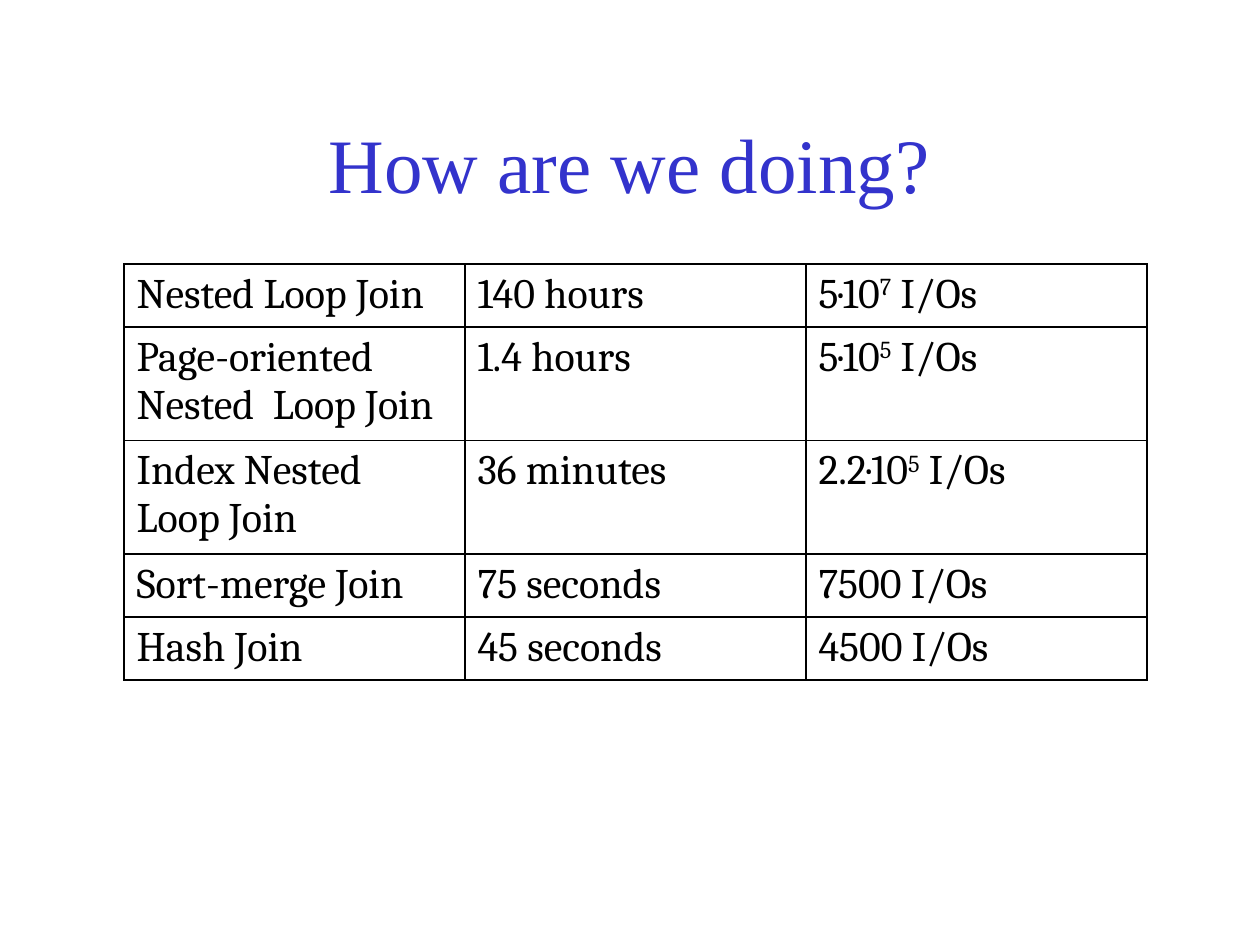
from typing import NamedTuple

from lxml.etree import SubElement
from pptx import Presentation
from pptx.dml.color import RGBColor
from pptx.enum.text import MSO_ANCHOR as Anchor, PP_ALIGN as Align
from pptx.oxml.ns import qn
from pptx.util import Emu, Pt

PX = 914400 // 126
COLORS = {"title": "3333CC", "text": "000000", "border": "000000", "cell": "FFFFFF"}
COLUMN_WIDTH = 341
LINE_HEIGHT = 48
ROW_PADDING = 13


class JoinCost(NamedTuple):
    method: str
    time: str
    count: str
    exponent: str = ""
    lines: int = 1


COSTS = [
    JoinCost("Nested Loop Join", "140 hours", "5·10", "7"),
    JoinCost("Page-oriented Nested  Loop Join", "1.4 hours", "5·10", "5", lines=2),
    JoinCost("Index Nested Loop Join", "36 minutes", "2.2·10", "5", lines=2),
    JoinCost("Sort-merge Join", "75 seconds", "7500"),
    JoinCost("Hash Join", "45 seconds", "4500"),
]


def px(length: int) -> Emu:
    return Emu(length * PX)


def add_text(para, text: str, *, size: int = 24, font: str = "Cambria",
             color: str = "text", baseline: int = 0) -> None:
    span = para.add_run()
    span.text = text
    span.font.size = Pt(size)
    span.font.name = font
    span.font.color.rgb = RGBColor.from_string(COLORS[color])
    if baseline:
        span.font._element.set("baseline", str(baseline * 1000))


def style_cell(cell) -> None:
    properties = cell._tc.get_or_add_tcPr()
    for side in ("lnL", "lnR", "lnT", "lnB"):
        line = SubElement(properties, qn(f"a:{side}"), w=str(Pt(1)))
        fill = SubElement(line, qn("a:solidFill"))
        SubElement(fill, qn("a:srgbClr"), val=COLORS["border"])
    cell.fill.solid()
    cell.fill.fore_color.rgb = RGBColor.from_string(COLORS["cell"])


def add_title(page, text: str) -> None:
    box = page.shapes.add_textbox(px(94), px(84), px(1071), px(158))
    frame = box.text_frame
    frame.word_wrap = True
    frame.vertical_anchor = Anchor.MIDDLE
    para = frame.paragraphs[0]
    para.alignment = Align.CENTER
    add_text(para, text, size=44, font="Times New Roman", color="title")


def add_cost_table(page, costs: list[JoinCost]) -> None:
    heights = [ROW_PADDING + LINE_HEIGHT * cost.lines for cost in costs]
    table = page.shapes.add_table(len(costs), 3, px(124), px(264),
                                  px(3 * COLUMN_WIDTH), px(sum(heights))).table
    table.first_row = table.horz_banding = False
    for column in table.columns:
        column.width = px(COLUMN_WIDTH)
    for row, height, cost in zip(table.rows, heights, costs):
        row.height = px(height)
        for cell in row.cells:
            style_cell(cell)
        method, time, count = (cell.text_frame.paragraphs[0] for cell in row.cells)
        add_text(method, cost.method)
        add_text(time, cost.time)
        if cost.exponent:
            add_text(count, cost.count)
            add_text(count, cost.exponent, baseline=30)
            add_text(count, " I/Os")
        else:
            add_text(count, f"{cost.count} I/Os")


def main() -> None:
    deck = Presentation()
    deck.slide_width, deck.slide_height = px(1260), px(945)
    page = deck.slides.add_slide(deck.slide_layouts[6])

    # Heading
    add_title(page, "How are we doing?")

    # Running time and I/O count of each join method
    add_cost_table(page, COSTS)

    deck.save("out.pptx")


if __name__ == "__main__":
    main()
